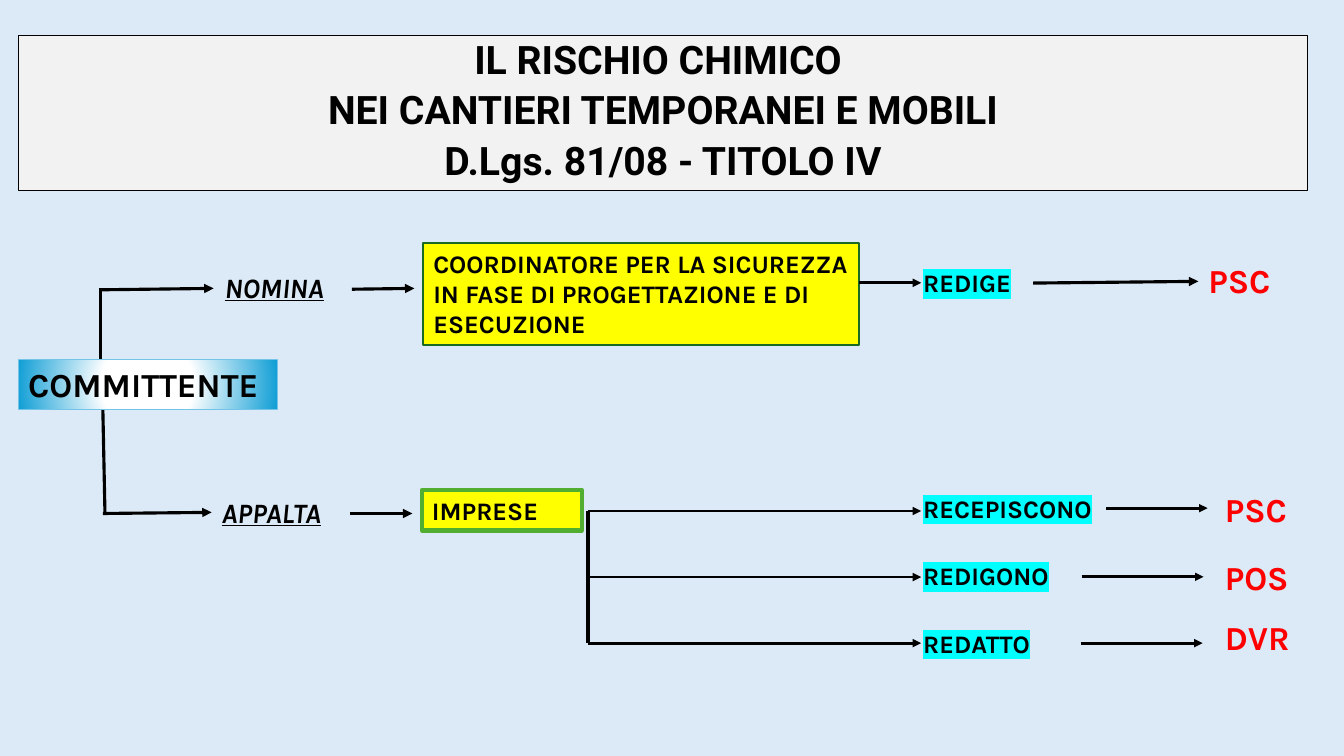
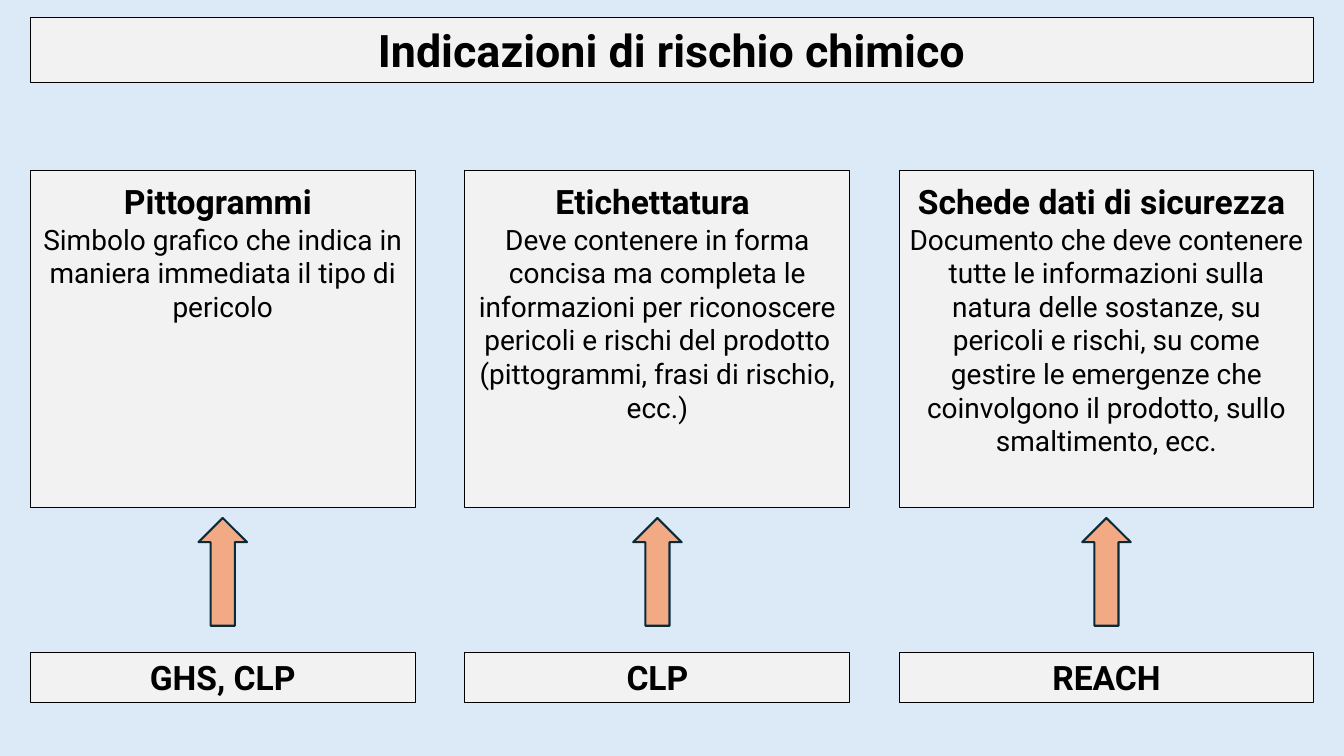
"""Builds two slides on chemical risk on building sites."""
from dataclasses import dataclass

from lxml import etree
from pptx import Presentation
from pptx.dml.color import RGBColor
from pptx.enum.shapes import MSO_CONNECTOR, MSO_SHAPE
from pptx.enum.text import MSO_ANCHOR, PP_ALIGN
from pptx.oxml import parse_xml
from pptx.oxml.ns import qn
from pptx.util import Pt

RECT, ARROW = MSO_SHAPE.RECTANGLE, MSO_SHAPE.UP_ARROW
LINE = MSO_CONNECTOR.STRAIGHT
TOP = MSO_ANCHOR.TOP
LEFT, CENTER = PP_ALIGN.LEFT, PP_ALIGN.CENTER
SPACE = "http://schemas.openxmlformats.org/drawingml/2006/main"


@dataclass(frozen=True)
class Type:
    font: str
    size: int
    color: str = "000000"
    bold: bool = True
    slant: bool = False
    mark: str = ""


class Theme:
    sky, panel, ink = "DCEAF7", "F2F2F2", "000000"
    yellow, green, pine = "FFFF00", "51AE30", "196B24"
    glow, rim = ("FFFFFF", "0F9ED5"), "74C4E9"
    peach, navy = "F2AA84", "092A39"
    cover = Type("Roboto", 28)
    title = Type("Roboto", 32)
    head = Type("Roboto", 24)
    body = Type("Roboto", 20, bold=False)
    owner = Type("Karla", 24)
    role = Type("Karla", 18)
    act = Type("Karla", 20, slant=True)
    verb = Type("Karla", 18, mark="00FFFF")
    paper = Type("Karla", 24, color="FF0000")


class Deck:
    def __init__(self, theme):
        self.theme = theme
        self.prs = Presentation()
        self.prs.slide_width, self.prs.slide_height = Pt(960), Pt(540)
        back = self.prs.slide_master.background.fill
        back.solid()
        back.fore_color.rgb = RGBColor.from_string(theme.sky)
        self.slide = None

    def page(self):
        self.slide = self.prs.slides.add_slide(self.prs.slide_layouts[6])

    def text(self, shape, paras, align=LEFT, lead=None, after=None):
        frame = shape.text_frame
        frame.word_wrap = True
        frame.vertical_anchor = TOP
        for i, runs in enumerate(paras):
            para = frame.add_paragraph() if i else frame.paragraphs[0]
            para.alignment = align
            if lead:
                para.line_spacing = lead
            if after:
                para.space_after = Pt(after)
            for words, kind in runs:
                self.piece(para, words, kind)

    def piece(self, para, words, kind):
        run = para.add_run()
        run.text = words
        font = run.font
        font.name, font.size, font.bold = kind.font, Pt(kind.size), kind.bold
        font.italic = font.underline = kind.slant
        font.color.rgb = RGBColor.from_string(kind.color)
        if kind.mark:
            mark = etree.Element(qn("a:highlight"))
            etree.SubElement(mark, qn("a:srgbClr"), val=kind.mark)
            run._r.rPr.find(qn("a:solidFill")).addnext(mark)

    def shape(self, at, fill, edge, width, form=RECT):
        shape = self.slide.shapes.add_shape(form, *map(Pt, at))
        shape.shadow.inherit = False
        shape.fill.solid()
        shape.fill.fore_color.rgb = RGBColor.from_string(fill)
        shape.line.color.rgb = RGBColor.from_string(edge)
        shape.line.width = Pt(width)
        return shape

    def panel(self, at, paras, **style):
        shape = self.shape(at, self.theme.panel, self.theme.ink, 0.75)
        self.text(shape, paras, CENTER, **style)

    def box(self, at, words, kind, fill, edge, width):
        shape = self.shape(at, fill, edge, width)
        self.text(shape, [[(words, kind)]])
        return shape

    def glow(self, shape):
        core, outer = self.theme.glow
        stops = "".join(
            f'<a:gs pos="{pos}"><a:srgbClr val="{color}"/></a:gs>'
            for pos, color in ((0, core), (35000, core), (100000, outer)))
        grad = parse_xml(
            f'<a:gradFill xmlns:a="{SPACE}" rotWithShape="1">'
            f'<a:gsLst>{stops}</a:gsLst><a:path path="circle">'
            '<a:fillToRect l="50000" t="50000" r="50000" b="50000"/>'
            '</a:path></a:gradFill>')
        props = shape._element.spPr
        props.replace(props.find(qn("a:solidFill")), grad)

    def label(self, at, words, kind):
        box = self.slide.shapes.add_textbox(*map(Pt, at))
        self.text(box, [[(words, kind)]])

    def line(self, ends, width=2.25, tip=True):
        line = self.slide.shapes.add_connector(LINE, *map(Pt, ends))
        line.line.color.rgb = RGBColor.from_string(self.theme.ink)
        line.line.width = Pt(width)
        props = line._element.spPr
        if tip:
            stroke = props.find(qn("a:ln"))
            etree.SubElement(stroke, qn("a:tailEnd"), type="triangle")
        etree.SubElement(props, qn("a:effectLst"))


def duties(deck):
    theme = deck.theme
    deck.page()
    titles = ("IL RISCHIO CHIMICO ", "NEI CANTIERI TEMPORANEI E MOBILI",
              "D.Lgs. 81/08 - TITOLO IV")
    deck.panel((13, 25.2, 921, 111), [[(row, theme.cover)] for row in titles],
               lead=0.9, after=6)
    owner = deck.box((13, 256.5, 185, 36), "COMMITTENTE", theme.owner,
                     theme.sky, theme.rim, 0.75)
    deck.glow(owner)
    deck.box((302.4, 173.5, 311.5, 73), "COORDINATORE PER LA SICUREZZA IN FASE "
             "DI PROGETTAZIONE E DI ESECUZIONE", theme.role,
             theme.yellow, theme.pine, 1.5)
    deck.box((301.5, 350, 114, 29), "IMPRESE", theme.role,
             theme.yellow, theme.green, 3)

    deck.label((153.4, 190, 96.5, 32), "NOMINA", theme.act)
    deck.label((151.2, 350.5, 132, 32), "APPALTA", theme.act)
    for ends in ((72.5, 207, 152.6, 206), (251.3, 206.6, 296, 206),
                 (738, 202.2, 856, 201), (73.5, 366.8, 151.2, 366),
                 (250, 366.8, 294.5, 366.8)):
        deck.line(ends)
    deck.line((613.4, 202, 658, 202), 2)
    for ends in ((72, 206, 72, 256.5), (73.5, 293, 75, 366.8),
                 (420, 365, 420, 459.4)):
        deck.line(ends, tip=False)

    deck.label((652.3, 187.2, 80, 29), "REDIGE", theme.verb)
    deck.label((856, 182, 78, 36), "PSC", theme.paper)
    rows = (("RECEPISCONO", "PSC", 345.6, 790, 862.6, 363),
            ("REDIGONO", "POS", 394, 772.6, 859.7, 412),
            ("REDATTO", "DVR", 437, 772, 859, 459.4))
    for i, (verb, paper, top, start, end, mid) in enumerate(rows):
        y = 365 + 47.2 * i
        deck.line((420, y, 658, y), 2)
        deck.label((652.3, 348.5 + 48.2 * i, 141, 29), verb, theme.verb)
        deck.line((start, mid, end, mid), 2)
        deck.label((867.8, top, 86, 36), paper, theme.paper)


def signs(deck):
    theme = deck.theme
    deck.page()
    left, gap = 21.6, 35.5
    deck.panel((left, 12.6, 916.5, 46),
               [[("Indicazioni di rischio chimico", theme.title)]])
    cols = (
        ("Pittogrammi", "Simbolo grafico che indica in maniera immediata il "
         "tipo di pericolo", "GHS, CLP", 275),
        ("Etichettatura", "Deve contenere in forma concisa ma completa le "
         "informazioni per riconoscere pericoli e rischi del prodotto "
         "(pittogrammi, frasi di rischio, ecc.)", "CLP", 275),
        ("Schede dati di sicurezza", "Documento che deve contenere tutte le "
         "informazioni sulla natura delle sostanze, su pericoli e rischi, su "
         "come gestire le emergenze che coinvolgono il prodotto, sullo "
         "smaltimento, ecc.", "REACH", 295.5))
    for head, body, rule, width in cols:
        deck.panel((left, 121.5, width, 241),
                   [[(head, theme.head), (" ", theme.cover)],
                    [(body, theme.body)]])
        deck.shape((left + width / 2 - 17.3, 370, 34.6, 77),
                   theme.peach, theme.navy, 1.5, ARROW)
        deck.panel((left, 465.8, width, 36), [[(rule, theme.head)]])
        left += width + gap


def main():
    deck = Deck(Theme())
    duties(deck)
    signs(deck)
    deck.prs.save("out.pptx")


if __name__ == "__main__":
    main()
